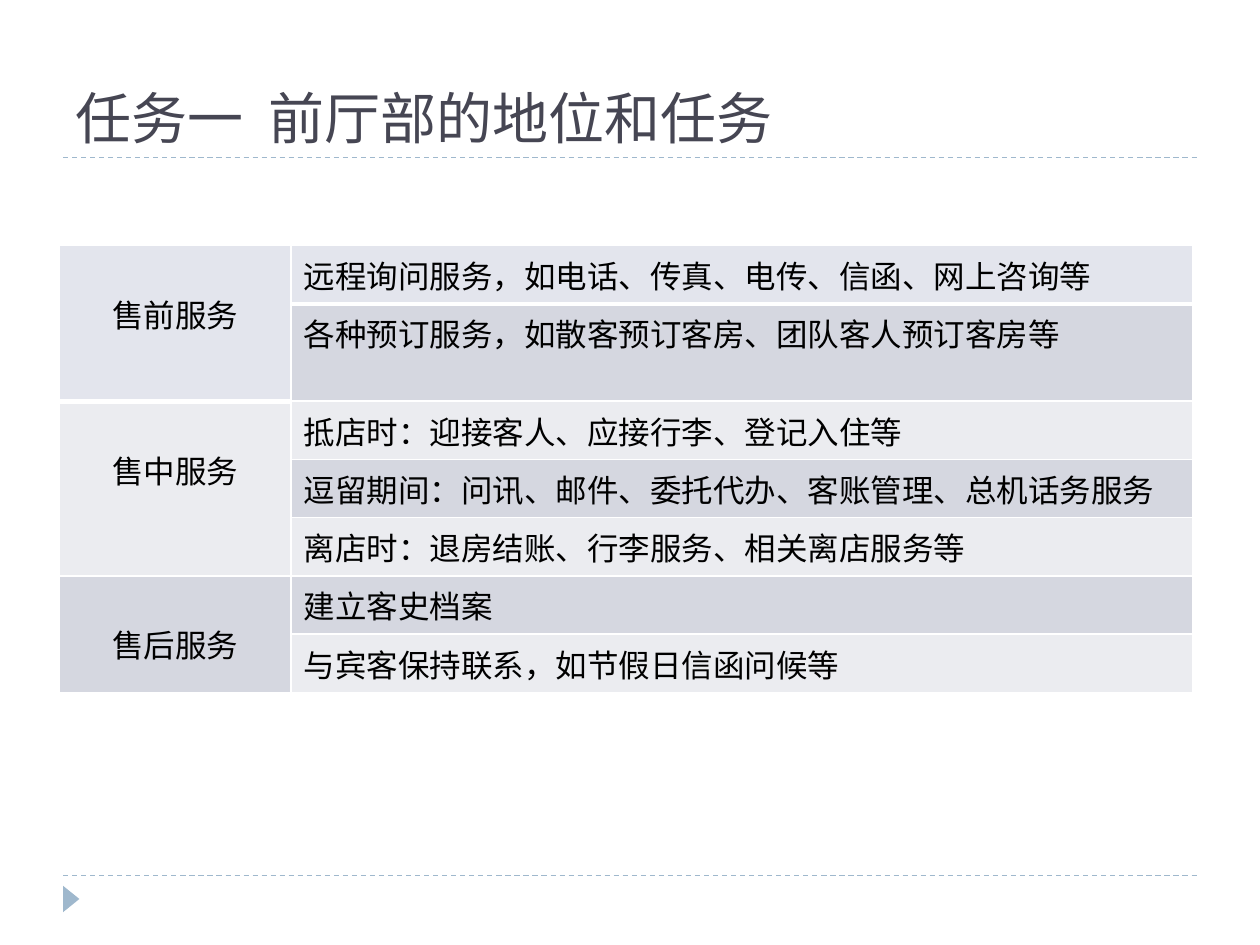
from lxml import etree
from pptx import Presentation
from pptx.dml.color import RGBColor
from pptx.enum import dml, shapes, text
from pptx.oxml import ns
from pptx.util import Inches, Pt

THEME = {
    "title_font": "TeX Gyre Bonum", "body_font": "Calibri",
    "title_size": 32, "body_size": 18,
    "title": "464653", "ink": "000000", "accent": "9FB8CD", "border": "FFFFFF",
    "header": "E3E5ED", "dark": "D5D7E0", "light": "EBECF0",
}

TITLE = "任务一  前厅部的地位和任务"
SERVICES = [
    ("售前服务", ["远程询问服务，如电话、传真、电传、信函、网上咨询等",
              "各种预订服务，如散客预订客房、团队客人预订客房等"]),
    ("售中服务", ["抵店时：迎接客人、应接行李、登记入住等",
              "逗留期间：问讯、邮件、委托代办、客账管理、总机话务服务",
              "离店时：退房结账、行李服务、相关离店服务等"]),
    ("售后服务", ["建立客史档案", "与宾客保持联系，如节假日信函问候等"]),
]
TABLE_LEFT, TABLE_TOP = 0.47, 1.95
COLUMN_WIDTHS = [1.84, 7.16]
ROW_HEIGHT, TALL_ROW, TALL_HEIGHT = 0.46, 1, 0.77
LABEL_DROP = 0.36
RULE_LEFT, RULE_RIGHT, RULE_HEIGHTS = 0.5, 9.5, [6.95, 1.25]


def color(name):
    return RGBColor.from_string(THEME[name])


def write(frame, words, font, size, ink, align=text.PP_ALIGN.LEFT):
    para = frame.paragraphs[0]
    para.alignment = align
    span = para.add_run()
    span.text = words
    span.font.name = THEME[font]
    span.font.size = Pt(THEME[size])
    span.font.color.rgb = color(ink)


def set_borders(cell, top=1, bottom=1):
    """Give all four sides a solid line, with widths in points."""
    props = cell._tc.get_or_add_tcPr()
    for side, width in (("L", 1), ("R", 1), ("T", top), ("B", bottom)):
        line = etree.SubElement(props, ns.qn("a:ln" + side), w=str(Pt(width)))
        fill = etree.SubElement(line, ns.qn("a:solidFill"))
        etree.SubElement(fill, ns.qn("a:srgbClr"), val=THEME["border"])


def style_cell(cell, fill, top=1, bottom=1):
    set_borders(cell, top, bottom)
    cell.fill.solid()
    cell.fill.fore_color.rgb = color(fill)


def row_fill(row):
    return "header" if row == 0 else "dark" if row % 2 else "light"


def add_title(page):
    box = page.shapes.title
    box.left, box.top, box.width, box.height = map(Inches, (0.5, 0.17, 9, 1.08))
    frame = box.text_frame
    frame.auto_size = text.MSO_AUTO_SIZE.NONE
    frame.vertical_anchor = text.MSO_ANCHOR.BOTTOM
    write(frame, TITLE, "title_font", "title_size", "title")


def add_rule(page, y):
    rule = page.shapes.add_connector(
        shapes.MSO_CONNECTOR.STRAIGHT,
        Inches(RULE_LEFT), Inches(y), Inches(RULE_RIGHT), Inches(y))
    rule.line.color.rgb = color("accent")
    rule.line.width = Pt(0.75)
    rule.line.dash_style = dml.MSO_LINE.DASH
    etree.SubElement(rule._element.spPr, ns.qn("a:effectLst"))


def add_marker(page):
    marker = page.shapes.add_shape(
        shapes.MSO_SHAPE.ISOSCELES_TRIANGLE, *map(Inches, (0.46, 7.07, 0.21, 0.13)))
    marker.rotation = 90
    marker.shadow.inherit = False
    marker.fill.solid()
    marker.fill.fore_color.rgb = color("accent")
    marker.line.fill.background()


def add_service_table(page):
    heights = [ROW_HEIGHT] * sum(len(details) for _, details in SERVICES)
    heights[TALL_ROW] = TALL_HEIGHT
    table = page.shapes.add_table(
        len(heights), len(COLUMN_WIDTHS), Inches(TABLE_LEFT), Inches(TABLE_TOP),
        Inches(sum(COLUMN_WIDTHS)), Inches(sum(heights))).table
    table.first_row = table.horz_banding = False
    for column, width in zip(table.columns, COLUMN_WIDTHS):
        column.width = Inches(width)
    for row, height in zip(table.rows, heights):
        row.height = Inches(height)

    first = 0
    for group, (service, details) in enumerate(SERVICES):
        label = table.cell(first, 0)
        label.merge(table.cell(first + len(details) - 1, 0))
        style_cell(label, row_fill(first),
                   top=3 if group == 1 else 1, bottom=3 if group == 0 else 1)
        label.margin_top = Inches(LABEL_DROP)
        write(label.text_frame, service, "body_font", "body_size", "ink",
              align=text.PP_ALIGN.CENTER)
        for row, detail in enumerate(details, first):
            cell = table.cell(row, 1)
            style_cell(cell, row_fill(row),
                       top=3 if row == 1 else 1, bottom=3 if row == 0 else 1)
            write(cell.text_frame, detail, "body_font", "body_size", "ink")
        first += len(details)


def main():
    deck = Presentation()
    deck.slide_width, deck.slide_height = Inches(10), Inches(7.5)
    page = deck.slides.add_slide(deck.slide_layouts[5])
    for y in RULE_HEIGHTS:
        add_rule(page, y)
    add_marker(page)
    add_title(page)
    add_service_table(page)
    deck.save("out.pptx")


if __name__ == "__main__":
    main()
